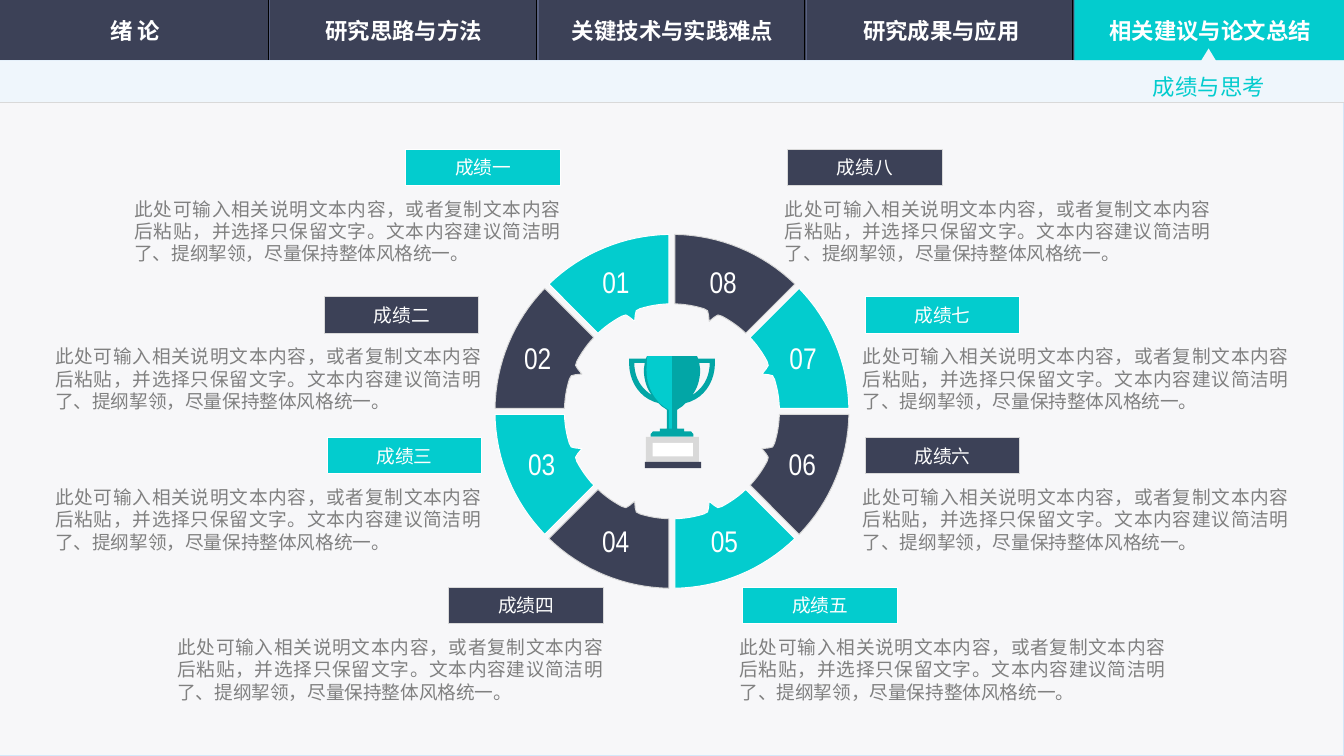
from dataclasses import dataclass
from math import asin, cos, pi, radians, sin

from lxml import etree
from pptx import Presentation
from pptx.dml.color import RGBColor
from pptx.enum.shapes import MSO_CONNECTOR, MSO_SHAPE
from pptx.enum.text import MSO_ANCHOR, PP_ALIGN
from pptx.oxml.ns import qn
from pptx.util import Pt

RECTANGLE = MSO_SHAPE.RECTANGLE
STRAIGHT = MSO_CONNECTOR.STRAIGHT
MIDDLE, TOP = MSO_ANCHOR.MIDDLE, MSO_ANCHOR.TOP
CENTER, JUSTIFY, LEFT = PP_ALIGN.CENTER, PP_ALIGN.JUSTIFY, PP_ALIGN.LEFT
COLORS = {
    "navy": "3C4157", "teal": "03CCCE", "deep_teal": "02A6A6", "white": "FFFFFF",
    "page": "F7F7F9", "page_edge": "D4E7F9", "strip": "EFF6FC", "silver": "D9D9D9",
    "black": "000000", "groove": "596181", "gray": "808080",
}
NARROW, BODY, HEADING = "Arial Narrow", "Arial", "Noto Sans CJK SC"
DESCRIPTION = (
    "此处可输入相关说明文本内容，或者复制文本内容后粘贴，并选择只保留文字。"
    "文本内容建议简洁明了、提纲挈领，尽量保持整体风格统一。"
)
TABS = ["绪 论", "研究思路与方法", "关键技术与实践难点", "研究成果与应用", "相关建议与论文总结"]
PAGE_WIDTH, PAGE_HEIGHT = 720, 405
TAB_STEP, NAV_HEIGHT, STRIP_BOTTOM = 143.7, 32.4, 54.7
CENTER_X, CENTER_Y = 360, 220.4
OUTER_RADIUS, INNER_RADIUS, HALF_GAP = 94.8, 57.6, 1.6
TOOTH = [(-3, 57.2), (-1.7, 55.3), (0, 52.2), (1.7, 55.3), (3, 57.2)]

Point = tuple[float, float]


@dataclass
class Achievement:
    numeral: str
    label_left: float
    label_top: float
    text_left: float
    number_x: float
    number_y: float


@dataclass
class TextStyle:
    font: str
    size: float
    color: str
    align: PP_ALIGN = CENTER
    bold: bool = False
    spacing: float = 1.0


ACHIEVEMENTS = [
    Achievement("一", 217.4, 79.9, 72, 330, 150.8),
    Achievement("二", 173.8, 159.1, 29.5, 288, 191.9),
    Achievement("三", 175.2, 234.4, 29.5, 290.2, 248.8),
    Achievement("四", 240.4, 314.6, 95, 329.8, 289.8),
    Achievement("五", 397.8, 314.6, 396.2, 388.1, 289.8),
    Achievement("六", 463.6, 234.4, 462.2, 429.8, 248.8),
    Achievement("七", 463.6, 159.1, 462.2, 430.2, 191.9),
    Achievement("八", 421.9, 79.9, 420.5, 387.4, 150.8),
]
NUMBER_STYLE = TextStyle(NARROW, 16, "white")
LABEL_STYLE = TextStyle(NARROW, 10, "white")
DESCRIPTION_STYLE = TextStyle(BODY, 10, "gray", JUSTIFY)
TAB_STYLE = TextStyle(HEADING, 12, "white", bold=True)
SUBTITLE_STYLE = TextStyle(HEADING, 12, "teal", LEFT, spacing=1.5)


def color(name: str) -> RGBColor:
    return RGBColor.from_string(COLORS[name])


def paint(shape, fill: str, line: str | None = None) -> None:
    shape.shadow.inherit = False
    shape.fill.solid()
    shape.fill.fore_color.rgb = color(fill)
    if line:
        shape.line.color.rgb = color(line)
        shape.line.width = Pt(0.5)
    else:
        shape.line.fill.background()


def draw_box(page, left: float, top: float, width: float, height: float,
             fill: str, line: str | None = None):
    box = page.shapes.add_shape(RECTANGLE, Pt(left), Pt(top), Pt(width), Pt(height))
    paint(box, fill, line)
    return box


def draw_outline(page, contours: list[list[Point]], fill: str, line: str | None = None) -> None:
    scaled = [[(Pt(x), Pt(y)) for x, y in contour] for contour in contours]
    builder = page.shapes.build_freeform(*scaled[0][0], scale=1.0)
    builder.add_line_segments(scaled[0][1:], close=True)
    for contour in scaled[1:]:
        builder.move_to(*contour[0])
        builder.add_line_segments(contour[1:], close=True)
    paint(builder.convert_to_shape(), fill, line)


def draw_line(page, start: Point, end: Point, stroke: str, width: float) -> None:
    line = page.shapes.add_connector(STRAIGHT, *(Pt(value) for value in start + end))
    line.line.color.rgb = color(stroke)
    line.line.width = Pt(width)
    etree.SubElement(line._element.spPr, qn("a:effectLst"))


def write(box, text: str, style: TextStyle) -> None:
    para = box.text_frame.paragraphs[0]
    para.text = text
    para.alignment = style.align
    if style.spacing != 1:
        para.line_spacing = style.spacing
    para.font.name = style.font
    para.font.size = Pt(style.size)
    para.font.bold = style.bold
    para.font.color.rgb = color(style.color)


def add_text(page, left: float, top: float, width: float, height: float, text: str,
             style: TextStyle, anchor: MSO_ANCHOR = TOP, wrap: bool = False,
             inset: bool = True) -> None:
    box = page.shapes.add_textbox(Pt(left), Pt(top), Pt(width), Pt(height))
    frame = box.text_frame
    frame.word_wrap = wrap
    frame.vertical_anchor = anchor
    if not inset:
        frame.margin_left = frame.margin_top = frame.margin_right = frame.margin_bottom = 0
    write(box, text, style)


def polar(radius: float, angle: float) -> Point:
    return CENTER_X + radius * sin(angle), CENTER_Y - radius * cos(angle)


def arc(radius: float, start: float, steps: int = 16) -> list[Point]:
    inset = asin(HALF_GAP / radius)
    sweep = pi / 4 - 2 * inset
    return [polar(radius, start + inset + sweep * step / steps) for step in range(steps + 1)]


def ring_segment(index: int) -> list[Point]:
    start = -(index + 1) * pi / 4
    inner = arc(INNER_RADIUS, start)
    tooth = [polar(radius, start + pi / 8 + radians(offset)) for offset, radius in TOOTH]
    return arc(OUTER_RADIUS, start) + (inner[:7] + tooth + inner[10:])[::-1]


def curve(a: Point, b: Point, c: Point, d: Point, steps: int = 10) -> list[Point]:
    points = []
    for step in range(steps + 1):
        t = step / steps
        weights = ((1 - t) ** 3, 3 * t * (1 - t) ** 2, 3 * t * t * (1 - t), t ** 3)
        points.append(tuple(sum(w * p[axis] for w, p in zip(weights, (a, b, c, d)))
                            for axis in (0, 1)))
    return points


def mirror(points: list[Point]) -> list[Point]:
    return [(2 * CENTER_X - x, y) for x, y in reversed(points)]


def draw_trophy(page) -> None:
    side = [(373.4, 190.8), (374, 192.2), (383, 192.2)]
    side += curve((383, 194.4), (383, 205.2), (376.6, 213.8), (367.2, 216))
    side += [(365.5, 217.7), (362.7, 219.6), (362.7, 229.7), (366.5, 229.7), (366.5, 231.1),
             (370.1, 231.1), (371.5, 232.6), (371.5, 234)]
    handle = curve((380.2, 194.4), (380.2, 202.3), (376.6, 208.1), (370.8, 211.7))
    handle += curve((370.8, 211.7), (373.7, 208.1), (375.1, 203), (375.1, 198))
    handle.append((374.6, 194.4))
    draw_outline(page, [side + mirror(side), handle, mirror(handle)], "deep_teal")
    shine = [(360, 190.8), (346.8, 190.8)]
    shine += curve((346.3, 198), (346.3, 207.4), (350.6, 215.3), (358.3, 219.6))
    draw_outline(page, [shine + [(358.3, 229.7), (360, 229.7)]], "teal")
    draw_box(page, 346, 234, 28.4, 13.7, "silver")
    draw_box(page, 349.6, 237.3, 21.6, 7.2, "white")
    draw_box(page, 345.4, 247.5, 30.2, 3.4, "navy")


def draw_navigation(page) -> None:
    draw_box(page, 0, 0, PAGE_WIDTH, NAV_HEIGHT, "navy")
    draw_box(page, 0, NAV_HEIGHT, PAGE_WIDTH, PAGE_HEIGHT - NAV_HEIGHT, "page", "page_edge")
    for index in range(1, len(TABS)):
        for shift, stroke, width in ((0, "black", 0.5), (0.8, "groove", 0.75)):
            x = index * TAB_STEP + shift
            draw_line(page, (x, 0), (x, NAV_HEIGHT), stroke, width)
    active_left = 4 * TAB_STEP + 0.8
    draw_box(page, active_left, 0, PAGE_WIDTH - active_left, NAV_HEIGHT, "teal")
    strip = [(647.5, 26), (651.4, NAV_HEIGHT), (PAGE_WIDTH, NAV_HEIGHT),
             (PAGE_WIDTH, STRIP_BOTTOM), (0, STRIP_BOTTOM), (0, NAV_HEIGHT), (643.6, NAV_HEIGHT)]
    draw_outline(page, [strip], "strip")
    draw_line(page, (0, STRIP_BOTTOM), (PAGE_WIDTH, STRIP_BOTTOM), "silver", 0.5)
    for index, tab in enumerate(TABS):
        add_text(page, 144 * index + 0.7, 5, 143.3, 22.3, tab, TAB_STYLE, MIDDLE, wrap=True)
    add_text(page, 610.6, 29.5, 74.9, 26.6, "成绩与思考", SUBTITLE_STYLE, MIDDLE)


def draw_achievement(page, index: int, item: Achievement) -> None:
    fill, line = ("navy", "silver") if index % 2 else ("teal", "white")
    draw_outline(page, [ring_segment(index)], fill, line)
    add_text(page, item.number_x - 15.8, item.number_y - 13.3, 31.6, 26.6,
             f"{index + 1:02d}", NUMBER_STYLE)
    add_text(page, item.text_left, item.label_top + 25.9, 228.2, 36, DESCRIPTION,
             DESCRIPTION_STYLE, wrap=True, inset=False)
    label = draw_box(page, item.label_left, item.label_top, 82.8, 19.4, fill, line)
    label.text_frame.vertical_anchor = MIDDLE
    write(label, f"成绩{item.numeral}", LABEL_STYLE)


def main() -> None:
    deck = Presentation()
    deck.slide_width, deck.slide_height = Pt(PAGE_WIDTH), Pt(PAGE_HEIGHT)
    page = deck.slides.add_slide(deck.slide_layouts[6])
    draw_navigation(page)
    for index, item in enumerate(ACHIEVEMENTS):
        draw_achievement(page, index, item)
    draw_trophy(page)
    deck.save("out.pptx")


if __name__ == "__main__":
    main()
